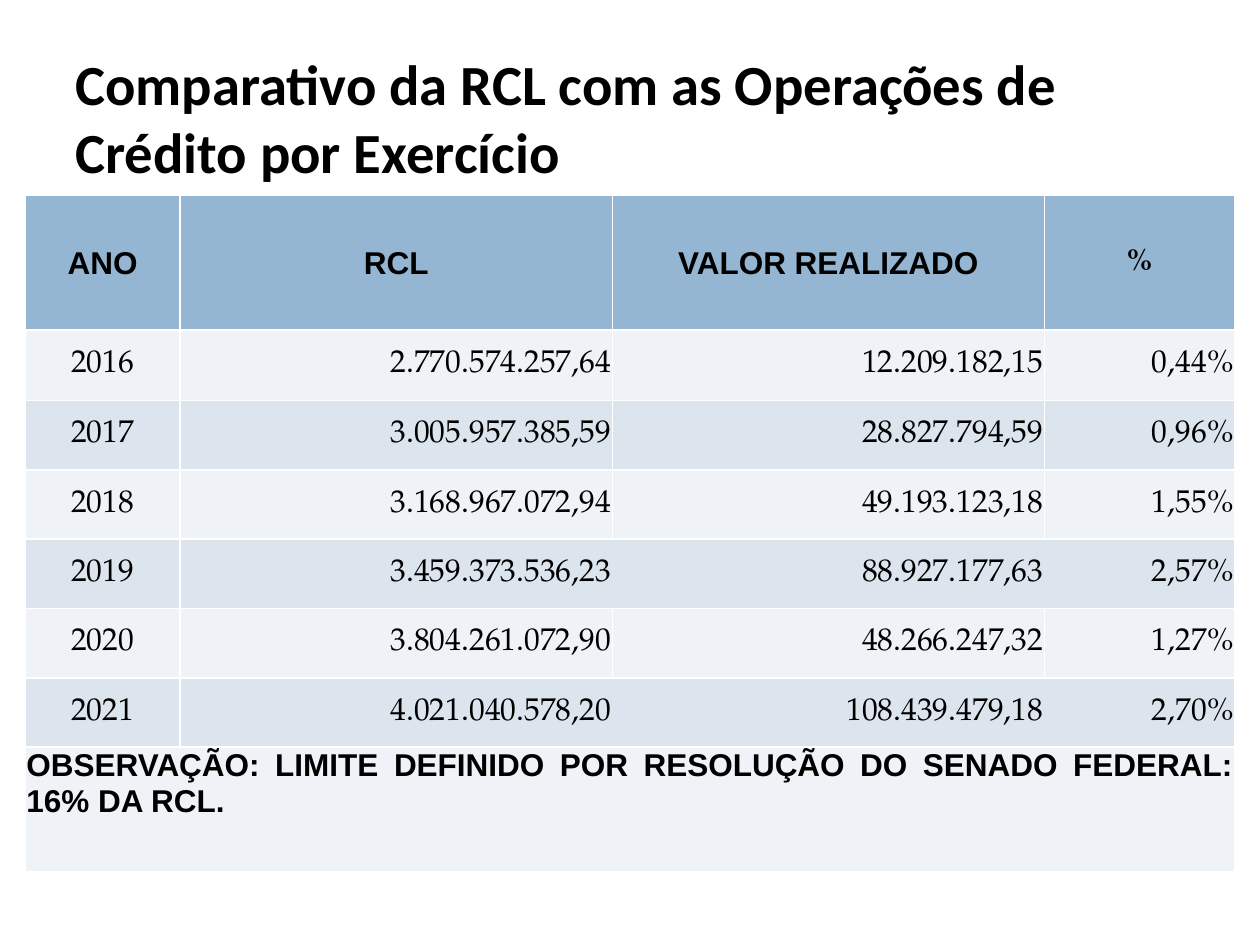
from lxml import etree
from pptx import Presentation
from pptx.dml.color import RGBColor
from pptx.enum.text import MSO_ANCHOR, PP_ALIGN
from pptx.oxml.ns import qn
from pptx.util import Inches, Pt

LEFT, CENTER, RIGHT = PP_ALIGN.LEFT, PP_ALIGN.CENTER, PP_ALIGN.RIGHT
JUSTIFY = PP_ALIGN.JUSTIFY
TOP, MIDDLE = MSO_ANCHOR.TOP, MSO_ANCHOR.MIDDLE

COLORS = {
    "text": "000000",
    "border": "FFFFFF",
    "header": "94B6D2",
    "light": "EFF3F7",
    "dark": "DCE5EE",
}
SERIF = "TeX Gyre Pagella"
COLUMN_WIDTHS = [1.23, 3.43, 3.43, 1.51]
ROW_HEIGHTS = [1.07, 0.56] + [0.55] * 5 + [0.99]
HEADERS = ["ANO", "RCL", "VALOR REALIZADO", "%"]
YEARS = [
    ("2016", "2.770.574.257,64", "12.209.182,15", "0,44%"),
    ("2017", "3.005.957.385,59", "28.827.794,59", "0,96%"),
    ("2018", "3.168.967.072,94", "49.193.123,18", "1,55%"),
    ("2019", "3.459.373.536,23", "88.927.177,63", "2,57%"),
    ("2020", "3.804.261.072,90", "48.266.247,32", "1,27%"),
    ("2021", "4.021.040.578,20", "108.439.479,18", "2,70%"),
]
UNDIVIDED_YEARS = ("2019", "2021")
NOTE = "OBSERVAÇÃO: LIMITE DEFINIDO POR RESOLUÇÃO DO SENADO FEDERAL: 16% DA RCL."


def write_text(text_frame, text, font="Arial", size=18, bold=False, align=LEFT):
    paragraph = text_frame.paragraphs[0]
    paragraph.alignment = align
    run = paragraph.add_run()
    run.text = text
    run.font.name = font
    run.font.size = Pt(size)
    run.font.bold = bold
    run.font.color.rgb = RGBColor.from_string(COLORS["text"])


def set_borders(cell, hidden=""):
    properties = cell._tc.get_or_add_tcPr()
    for side in "LRTB":
        line = etree.SubElement(properties, qn(f"a:ln{side}"), w=str(Pt(1)))
        if side in hidden:
            etree.SubElement(line, qn("a:noFill"))
        else:
            fill = etree.SubElement(line, qn("a:solidFill"))
            etree.SubElement(fill, qn("a:srgbClr"), val=COLORS["border"])


def style_cell(cell, color, anchor=MIDDLE, hidden=""):
    cell.margin_left = cell.margin_right = cell.margin_top = Inches(0.01)
    cell.margin_bottom = 0
    cell.vertical_anchor = anchor
    set_borders(cell, hidden)
    cell.fill.solid()
    cell.fill.fore_color.rgb = RGBColor.from_string(COLORS[color])


def add_title(slide, text):
    box = slide.shapes.add_textbox(Inches(0.5), Inches(0.3), Inches(9), Inches(1.25))
    box.text_frame.word_wrap = True
    box.text_frame.vertical_anchor = MIDDLE
    write_text(box.text_frame, text, font="Calibri", size=32.4, bold=True)


def add_table(slide):
    table = slide.shapes.add_table(
        len(ROW_HEIGHTS), len(COLUMN_WIDTHS),
        Inches(0.2), Inches(1.55), Inches(sum(COLUMN_WIDTHS)), Inches(sum(ROW_HEIGHTS)),
    ).table
    for column, width in zip(table.columns, COLUMN_WIDTHS):
        column.width = Inches(width)
    for row, height in zip(table.rows, ROW_HEIGHTS):
        row.height = Inches(height)
    return table


def fill_header(table):
    for column, label in enumerate(HEADERS):
        cell = table.cell(0, column)
        style_cell(cell, "header")
        font, size = (SERIF, 17) if label == "%" else ("Arial", 18)
        write_text(cell.text_frame, label, font=font, size=size, bold=True, align=CENTER)


def fill_years(table):
    hidden_sides = ["", "R", "LR", "L"]
    for row, values in enumerate(YEARS, start=1):
        color = "light" if row % 2 else "dark"
        for column, value in enumerate(values):
            cell = table.cell(row, column)
            hidden = hidden_sides[column] if values[0] in UNDIVIDED_YEARS else ""
            style_cell(cell, color, hidden=hidden)
            write_text(cell.text_frame, value, font=SERIF, align=RIGHT if column else CENTER)


def fill_note(table):
    last_row = len(ROW_HEIGHTS) - 1
    cell = table.cell(last_row, 0)
    cell.merge(table.cell(last_row, len(COLUMN_WIDTHS) - 1))
    style_cell(cell, "light", anchor=TOP)
    write_text(cell.text_frame, NOTE, bold=True, align=JUSTIFY)


def main():
    presentation = Presentation()
    presentation.slide_width = Inches(10)
    presentation.slide_height = Inches(7.5)
    slide = presentation.slides.add_slide(presentation.slide_layouts[6])
    add_title(slide, "Comparativo da RCL com as Operações de Crédito por Exercício")
    table = add_table(slide)
    fill_header(table)
    fill_years(table)
    fill_note(table)
    presentation.save("out.pptx")


if __name__ == "__main__":
    main()
